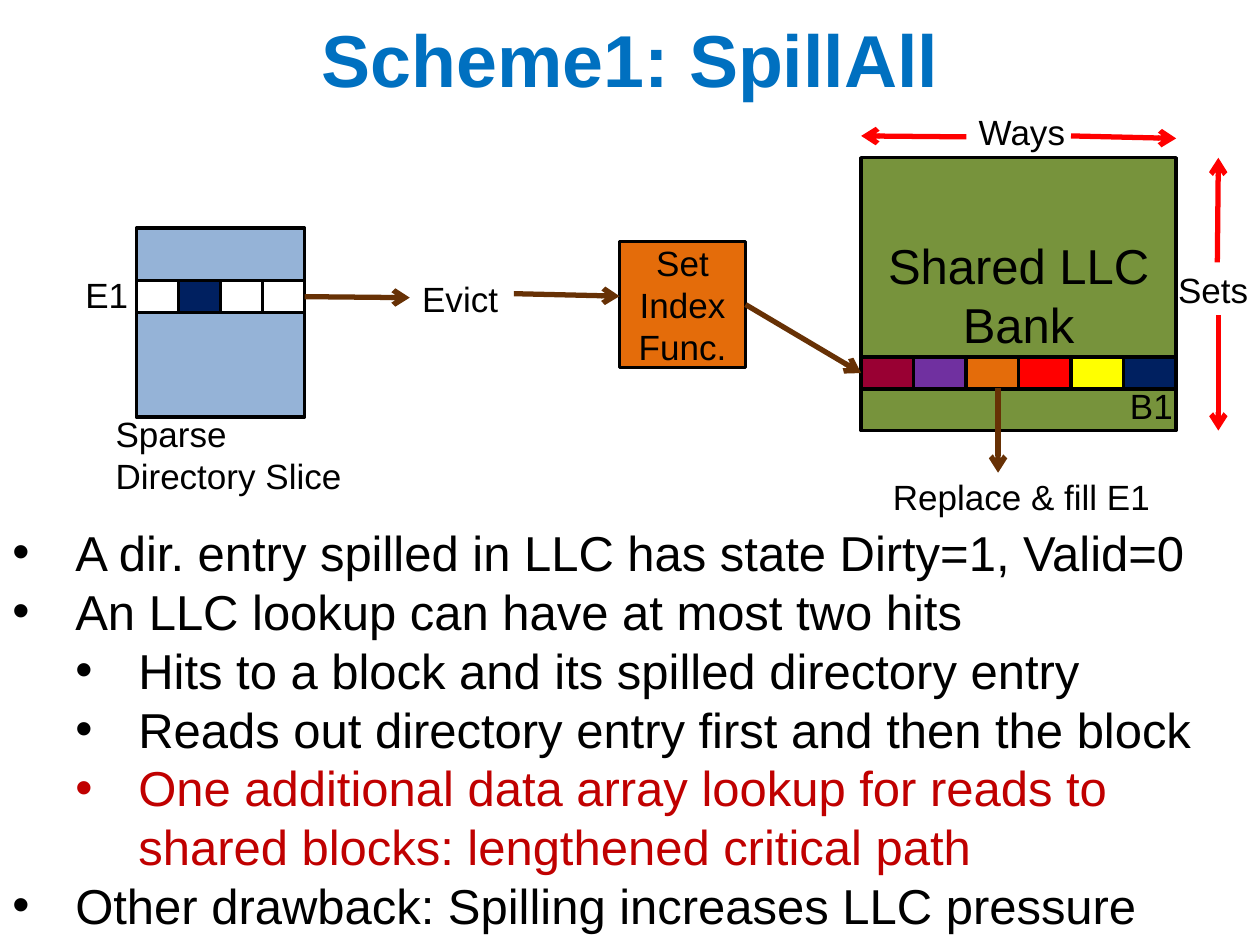
import pptx
import pptx.dml.color
import pptx.enum.shapes
import pptx.enum.text
import pptx.oxml.ns
import pptx.util
from lxml import etree

Cm = pptx.util.Cm
Pt = pptx.util.Pt
qn = pptx.oxml.ns.qn
RGB = pptx.dml.color.RGBColor.from_string
Align = pptx.enum.text.PP_ALIGN
Anchor = pptx.enum.text.MSO_ANCHOR
Fit = pptx.enum.text.MSO_AUTO_SIZE

COLORS = {
    "title": "0070C0", "text": "000000", "warning": "C00000",
    "directory": "95B3D7", "bank": "77933C", "white": "FFFFFF",
    "navy": "002060", "maroon": "990033", "purple": "7030A0",
    "orange": "E46C0A", "red": "FF0000", "yellow": "FFFF00", "brown": "673105",
}
TITLE_FONT = {"name": "Arial", "size": Pt(42), "bold": True}
LARGE_FONT = {"name": "Arial", "size": Pt(28)}
LABEL_FONT = {"name": "Arial", "size": Pt(20)}


def write_lines(frame, lines, font, color="text", align=Align.LEFT):
    for index, line in enumerate(lines):
        para = frame.paragraphs[0] if index == 0 else frame.add_paragraph()
        para.alignment = align
        span = para.add_run()
        span.text = line
        for name, value in font.items():
            setattr(span.font, name, value)
        span.font.color.rgb = RGB(COLORS[color])


def add_rectangle(left, top, width, height, color):
    box = page.shapes.add_shape(
        pptx.enum.shapes.MSO_SHAPE.RECTANGLE, Cm(left), Cm(top), Cm(width), Cm(height))
    box.shadow.inherit = False
    box.fill.solid()
    box.fill.fore_color.rgb = RGB(COLORS[color])
    box.line.color.rgb = RGB(COLORS["text"])
    box.line.width = Pt(2)
    box.text_frame.vertical_anchor = Anchor.MIDDLE
    return box


deck = pptx.Presentation()
deck.slide_width, deck.slide_height = Cm(25.4), Cm(19.05)
page = deck.slides.add_slide(deck.slide_layouts[5])

title = page.shapes.title
for name, value in {"left": 0, "top": 0, "width": Cm(25.4), "height": Cm(2.33)}.items():
    setattr(title, name, value)
title.text_frame.auto_size = Fit.NONE
title.text_frame.vertical_anchor = Anchor.MIDDLE
write_lines(title.text_frame, ["Scheme1: SpillAll"], TITLE_FONT, "title", Align.CENTER)

add_rectangle(2.75, 4.6, 3.39, 3.81, "directory")
bank = add_rectangle(17.36, 3.18, 6.35, 5.5, "bank")
write_lines(bank.text_frame, ["Shared LLC Bank"], LARGE_FONT, align=Align.CENTER)
index_box = add_rectangle(12.49, 4.87, 2.54, 2.54, "orange")
write_lines(index_box.text_frame, ["Set", "Index", "Func."], LABEL_FONT, align=Align.CENTER)

rows = [
    (2.75, 5.66, 3.39, ["white", "navy", "white", "white"]),
    (17.36, 7.2, 6.35, ["maroon", "purple", "orange", "red", "yellow", "navy"]),
]
directory_cells, bank_cells = [
    [add_rectangle(left + width / len(fills) * column, top, width / len(fills), 0.64, fill)
     for column, fill in enumerate(fills)]
    for left, top, width, fills in rows
]

labels = [
    (2.08, 8.2, 5.11, 1.96, ["Sparse", "Directory Slice"]),
    (1.47, 5.38, 1.4, 1.11, ["E1"]),
    (8.26, 5.46, 2.06, 1.11, ["Evict"]),
    (23.5, 5.28, 1.93, 1.11, ["Sets"]),
    (19.48, 2.11, 2.26, 1.11, ["Ways"]),
    (22.53, 7.62, 1.4, 1.11, ["B1"]),
    (17.75, 9.47, 5.74, 1.11, ["Replace & fill E1"]),
]
for left, top, width, height, lines in labels:
    label = page.shapes.add_textbox(Cm(left), Cm(top), Cm(width), Cm(height))
    label.text_frame.word_wrap = False
    label.text_frame.auto_size = Fit.SHAPE_TO_FIT_TEXT
    write_lines(label.text_frame, lines, LABEL_FONT)

arrows = [
    (6.14, 5.98, 8.26, 6.0, "brown", (directory_cells[-1], 3), None),
    (10.36, 5.92, 12.49, 5.97, "brown", None, None),
    (15.03, 6.14, 17.36, 7.52, "brown", (index_box, 3), (bank_cells[0], 1)),
    (20.12, 7.83, 20.12, 9.53, "brown", None, None),
    (24.56, 6.35, 24.56, 8.68, "red", None, None),
    (24.54, 5.29, 24.56, 3.18, "red", None, None),
    (21.59, 2.74, 23.71, 2.79, "red", None, None),
    (19.48, 2.76, 17.36, 2.74, "red", None, None),
]
for x1, y1, x2, y2, color, start, end in arrows:
    arrow = page.shapes.add_connector(
        pptx.enum.shapes.MSO_CONNECTOR.STRAIGHT, Cm(x1), Cm(y1), Cm(x2), Cm(y2))
    arrow.line.color.rgb = RGB(COLORS[color])
    arrow.line.width = Pt(3)
    etree.SubElement(arrow.line._get_or_add_ln(), qn("a:tailEnd"), type="arrow")
    etree.SubElement(arrow._element.spPr, qn("a:effectLst"))
    if start:
        arrow.begin_connect(*start)
    if end:
        arrow.end_connect(*end)

bullets = [
    (0, "A dir. entry spilled in LLC has state Dirty=1, Valid=0"),
    (0, "An LLC lookup can have at most two hits"),
    (1, "Hits to a block and its spilled directory entry"),
    (1, "Reads out directory entry first and then the block"),
    (1, "One additional data array lookup for reads to shared blocks: lengthened critical path"),
    (0, "Other drawback: Spilling increases LLC pressure"),
]
notes = page.shapes.add_textbox(0, Cm(10.41), Cm(25.37), Cm(8.64)).text_frame
notes.word_wrap = True
notes.auto_size = Fit.SHAPE_TO_FIT_TEXT
write_lines(notes, [line for level, line in bullets], LARGE_FONT)
for para, (level, line) in zip(notes.paragraphs, bullets):
    para.level = level
    properties = para._p.get_or_add_pPr()
    properties.set("marL", str(Cm(1.27 * (level + 1))))
    properties.set("indent", str(Cm(-1.27)))
    etree.SubElement(properties, qn("a:buFont"), typeface="Arial")
    etree.SubElement(properties, qn("a:buChar"), char="•")
notes.paragraphs[4].runs[0].font.color.rgb = RGB(COLORS["warning"])

deck.save("out.pptx")
